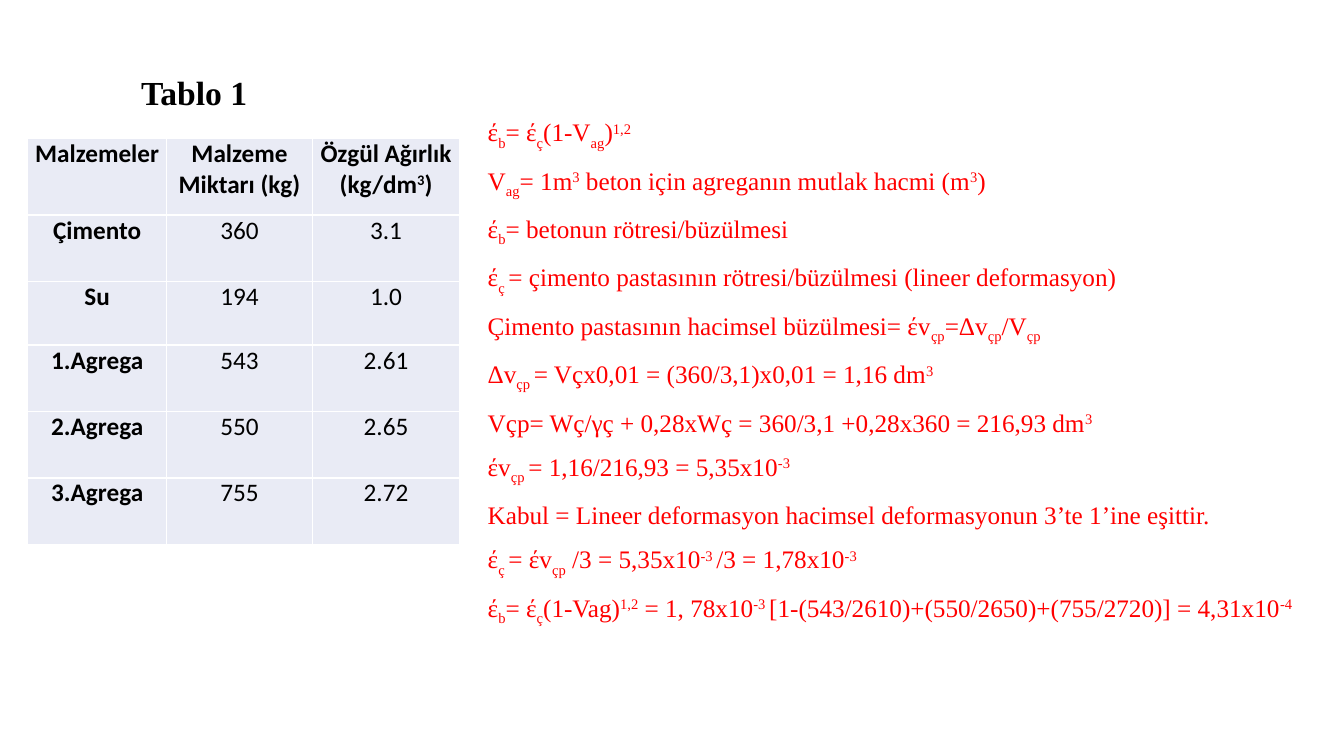
from lxml.etree import SubElement
from pptx import Presentation
from pptx.dml.color import RGBColor
from pptx.enum.text import MSO_ANCHOR as Anchor, MSO_AUTO_SIZE as AutoSize, PP_ALIGN as Align
from pptx.oxml.ns import qn
from pptx.util import Pt

# {_x} is a subscript, {^x} a superscript
CAPTION = "Tablo 1"
MATERIALS = [
    ("Malzemeler", "Malzeme Miktarı (kg)", "Özgül Ağırlık (kg/dm{^3})"),
    ("Çimento", "360", "3.1"),
    ("Su", "194", "1.0"),
    ("1.Agrega", "543", "2.61"),
    ("2.Agrega", "550", "2.65"),
    ("3.Agrega", "755", "2.72"),
]
SOLUTION = [
    "έ{_b}= έ{_ç}(1-V{_ag}){^1,2}",
    "V{_ag}= 1m{^3} beton için agreganın mutlak hacmi (m{^3})",
    "έ{_b}= betonun rötresi/büzülmesi",
    "έ{_ç }= çimento pastasının rötresi/büzülmesi (lineer deformasyon)",
    "Çimento pastasının hacimsel büzülmesi= έv{_çp}=Δv{_çp}/V{_çp}",
    "Δv{_çp }= Vçx0,01 = (360/3,1)x0,01 = 1,16 dm{^3}",
    "Vçp= Wç/γç + 0,28xWç = 360/3,1 +0,28x360 = 216,93 dm{^3}",
    "έv{_çp }= 1,16/216,93 = 5,35x10{^-3}",
    "Kabul = Lineer deformasyon hacimsel deformasyonun 3’te 1’ine eşittir.",
    "έ{_ç }= έv{_çp} /3 = 5,35x10{^-3 }/3 = 1,78x10{^-3}",
    "έ{_b}= έ{_ç}(1-Vag){^1,2} = 1, 78x10{^-3 }[1-(543/2610)+(550/2650)+(755/2720)] = 4,31x10{^-4}",
]
COLUMN_WIDTHS = (99.4, 104, 105.4)
ROW_HEIGHTS = (54.7, 47.5, 45.4, 47.5, 47.5, 47.5)
BASELINES = {"_": "-25000", "^": "30000"}
SERIF, SANS = "Times New Roman", "Calibri"
BLACK, RED, WHITE, PALE_BLUE = "000000", "FF0000", "FFFFFF", "E9EBF5"


def rgb(hex_code):
    return RGBColor.from_string(hex_code)


def write(paragraph, marked_text, face, size, color, bold=False):
    """Add the text run by run, raising and lowering the marked parts."""
    plain, *rest = marked_text.split("{")
    parts = [(plain, None)]
    for piece in rest:
        shifted, plain = piece.split("}")
        parts += [(shifted[1:], BASELINES[shifted[0]]), (plain, None)]
    for text, baseline in parts:
        if not text:
            continue
        run = paragraph.add_run()
        run.text = text
        run.font.name, run.font.size, run.font.bold = face, Pt(size), bold
        run.font.color.rgb = rgb(color)
        if baseline:
            run._r.get_or_add_rPr().set("baseline", baseline)


def add_borders(cell):
    properties = cell._tc.get_or_add_tcPr()
    for side in ("lnL", "lnR", "lnT", "lnB"):
        line = SubElement(properties, qn(f"a:{side}"), w=str(Pt(1)))
        fill = SubElement(line, qn("a:solidFill"))
        SubElement(fill, qn("a:srgbClr"), val=WHITE)


deck = Presentation()
deck.slide_width, deck.slide_height = Pt(960), Pt(540)
slide = deck.slides.add_slide(deck.slide_layouts[5])

caption = slide.shapes.title
caption.left, caption.top, caption.width, caption.height = Pt(93.6), Pt(47.5), Pt(106.6), Pt(36.3)
caption.text_frame.vertical_anchor = Anchor.TOP
caption.text_frame.auto_size = AutoSize.NONE
caption_line = caption.text_frame.paragraphs[0]
caption_line.alignment = Align.LEFT
write(caption_line, CAPTION, SERIF, 24, BLACK, bold=True)

materials = slide.shapes.add_table(
    len(MATERIALS), len(COLUMN_WIDTHS), Pt(19.7), Pt(98.9),
    Pt(sum(COLUMN_WIDTHS)), Pt(sum(ROW_HEIGHTS))).table
for column, width in zip(materials.columns, COLUMN_WIDTHS):
    column.width = Pt(width)
for r, (row, height) in enumerate(zip(MATERIALS, ROW_HEIGHTS)):
    materials.rows[r].height = Pt(height)
    for c, entry in enumerate(row):
        cell = materials.cell(r, c)
        add_borders(cell)
        cell.fill.solid()
        cell.fill.fore_color.rgb = rgb(PALE_BLUE)
        cell.margin_left = cell.margin_right = Pt(3.6)
        cell.margin_top = cell.margin_bottom = 0
        line = cell.text_frame.paragraphs[0]
        line.alignment = Align.CENTER
        write(line, entry, SANS, 18, BLACK, bold=r == 0 or c == 0)

solution = slide.shapes.add_textbox(Pt(341.3), Pt(79.7), Pt(600.5), Pt(350)).text_frame
solution.word_wrap = True
for i, step in enumerate(SOLUTION):
    line = solution.add_paragraph() if i else solution.paragraphs[0]
    line.alignment = Align.JUSTIFY
    line.space_after = Pt(10)
    write(line, step, SERIF, 18, RED)

deck.save("out.pptx")
